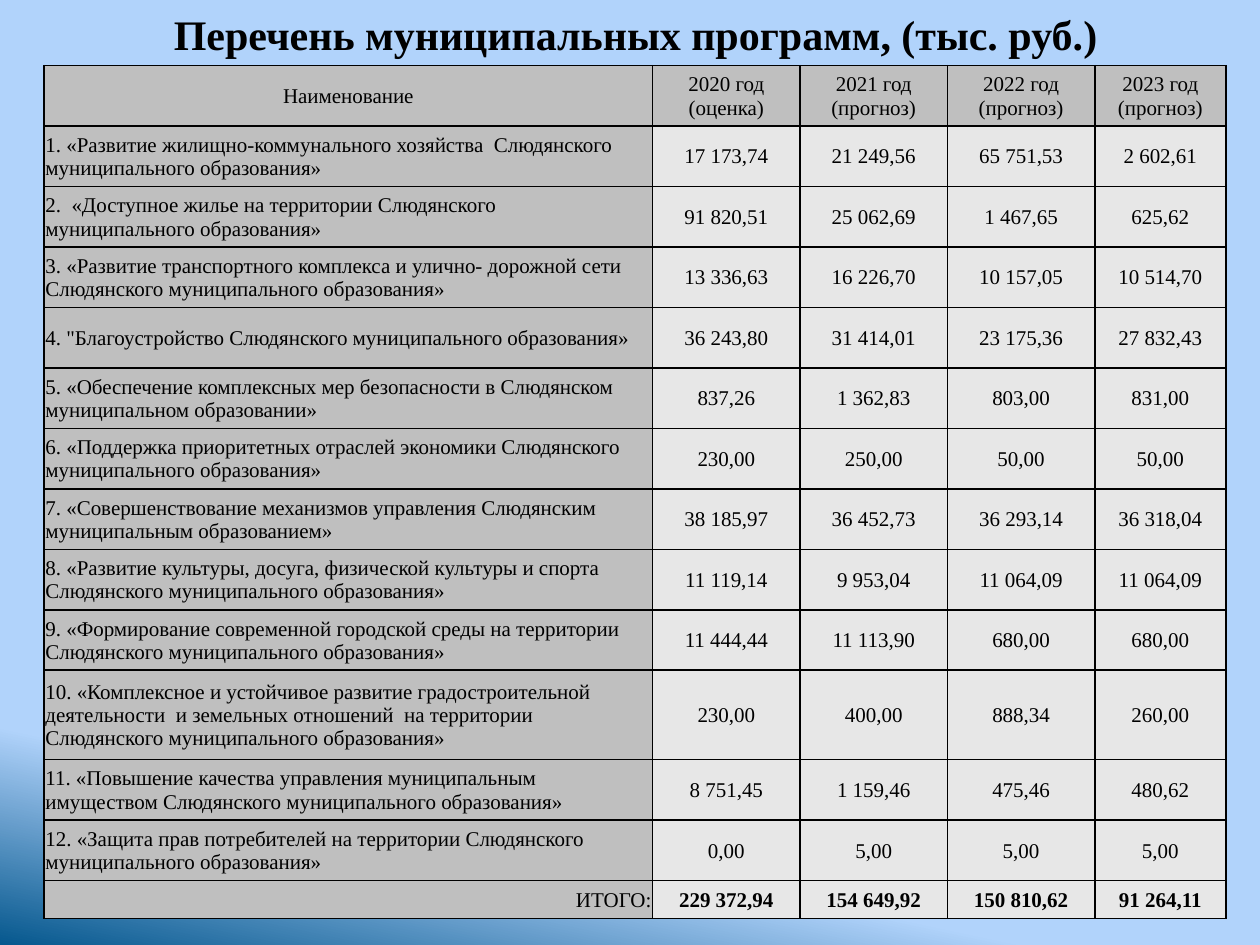
from lxml.etree import SubElement
from pptx import Presentation
from pptx.dml.color import RGBColor
from pptx.enum.text import MSO_ANCHOR, PP_ALIGN
from pptx.oxml.ns import qn
from pptx.util import Emu, Pt

TITLE = "Перечень муниципальных программ, (тыс. руб.)"
HEADER = ("Наименование", "2020 год (оценка)", "2021 год (прогноз)",
          "2022 год (прогноз)", "2023 год (прогноз)")
PROGRAMS = [
    ("1. «Развитие жилищно-коммунального хозяйства  Слюдянского муниципального образования»",
     "17 173,74", "21 249,56", "65 751,53", "2 602,61"),
    ("2.  «Доступное жилье на территории Слюдянского муниципального образования»",
     "91 820,51", "25 062,69", "1 467,65", "625,62"),
    ("3. «Развитие транспортного комплекса и улично- дорожной сети Слюдянского муниципального образования»",
     "13 336,63", "16 226,70", "10 157,05", "10 514,70"),
    ('4. "Благоустройство Слюдянского муниципального образования»',
     "36 243,80", "31 414,01", "23 175,36", "27 832,43"),
    ("5. «Обеспечение комплексных мер безопасности в Слюдянском муниципальном образовании»",
     "837,26", "1 362,83", "803,00", "831,00"),
    ("6. «Поддержка приоритетных отраслей экономики Слюдянского муниципального образования»",
     "230,00", "250,00", "50,00", "50,00"),
    ("7. «Совершенствование механизмов управления Слюдянским муниципальным образованием»",
     "38 185,97", "36 452,73", "36 293,14", "36 318,04"),
    ("8. «Развитие культуры, досуга, физической культуры и спорта Слюдянского муниципального образования»",
     "11 119,14", "9 953,04", "11 064,09", "11 064,09"),
    ("9. «Формирование современной городской среды на территории Слюдянского муниципального образования»",
     "11 444,44", "11 113,90", "680,00", "680,00"),
    ("10. «Комплексное и устойчивое развитие градостроительной деятельности  и земельных отношений"
     "  на территории Слюдянского муниципального образования»",
     "230,00", "400,00", "888,34", "260,00"),
    ("11. «Повышение качества управления муниципальным имуществом Слюдянского муниципального образования»",
     "8 751,45", "1 159,46", "475,46", "480,62"),
    ("12. «Защита прав потребителей на территории Слюдянского муниципального образования»",
     "0,00", "5,00", "5,00", "5,00"),
]
TOTAL = ("ИТОГО:", "229 372,94", "154 649,92", "150 810,62", "91 264,11")

SCALE = 9144
FONT = "Times New Roman"
BLACK = RGBColor(0x00, 0x00, 0x00)
NAME_FILL = RGBColor(0xBF, 0xBF, 0xBF)
VALUE_FILL = RGBColor(0xE7, 0xE7, 0xE7)
SKY = RGBColor(0xB1, 0xD3, 0xFB)
DEEP = RGBColor(0x06, 0x58, 0x8E)
GRADIENT = ((0.82, SKY), (1, DEEP))
COLS = [483, 117, 117, 117, 104]
ROWS = [48] * 10 + [71, 48, 48, 30]
MARGINS = {"margin_left": 1, "margin_top": 1, "margin_right": 1, "margin_bottom": 0}


def px(n):
    """Turn px into EMU."""
    return Emu(n * SCALE)


def write(tf, text, align, size, bold):
    """Put one formatted run into a text frame."""
    p = tf.paragraphs[0]
    p.alignment = align
    r = p.add_run()
    r.text = text
    for key, value in {"name": FONT, "size": Pt(size), "bold": bold}.items():
        setattr(r.font, key, value)
    r.font.color.rgb = BLACK


def add_borders(cell):
    """Draw a thin black line on every side of a cell."""
    tc_pr = cell._tc.get_or_add_tcPr()
    for i, side in enumerate("LRTB"):
        ln = SubElement(tc_pr, qn(f"a:ln{side}"), w=str(Pt(1)))
        fill = SubElement(ln, qn("a:solidFill"))
        SubElement(fill, qn("a:srgbClr"), val=str(BLACK))
        tc_pr.insert(i, ln)


def add_title(s):
    """Add the slide heading."""
    tf = s.shapes.add_textbox(px(20), px(-9), px(969), px(71)).text_frame
    tf.word_wrap = True
    tf.vertical_anchor = MSO_ANCHOR.MIDDLE
    write(tf, TITLE, PP_ALIGN.CENTER, 24, True)


def add_programs(s):
    """Add the table of programs."""
    rows = [HEADER, *PROGRAMS, TOTAL]
    table = s.shapes.add_table(len(ROWS), len(COLS), px(35), px(52),
                               px(sum(COLS)), px(sum(ROWS))).table
    for col, width in zip(table.columns, COLS):
        col.width = px(width)
    for i, (row, height, values) in enumerate(zip(table.rows, ROWS, rows)):
        row.height = px(height)
        for j, text in enumerate(values):
            cell = table.cell(i, j)
            for key, value in MARGINS.items():
                setattr(cell, key, px(value))
            cell.vertical_anchor = MSO_ANCHOR.MIDDLE
            cell.fill.solid()
            cell.fill.fore_color.rgb = NAME_FILL if i == 0 or j == 0 else VALUE_FILL
            add_borders(cell)
            align = PP_ALIGN.CENTER
            if j == 0 and values is not HEADER:
                align = PP_ALIGN.RIGHT if values is TOTAL else PP_ALIGN.LEFT
            write(cell.text_frame, text, align, 12, values is TOTAL and j > 0)


def main():
    """Build and save the slide."""
    prs = Presentation()
    prs.slide_width, prs.slide_height = px(1000), px(750)
    s = prs.slides.add_slide(prs.slide_layouts[6])
    fill = s.background.fill
    fill.gradient()
    fill.gradient_angle = 360 - 102
    for stop, (position, color) in zip(fill.gradient_stops, GRADIENT):
        stop.position = position
        stop.color.rgb = color
    add_title(s)
    add_programs(s)
    prs.save("out.pptx")


if __name__ == "__main__":
    main()
